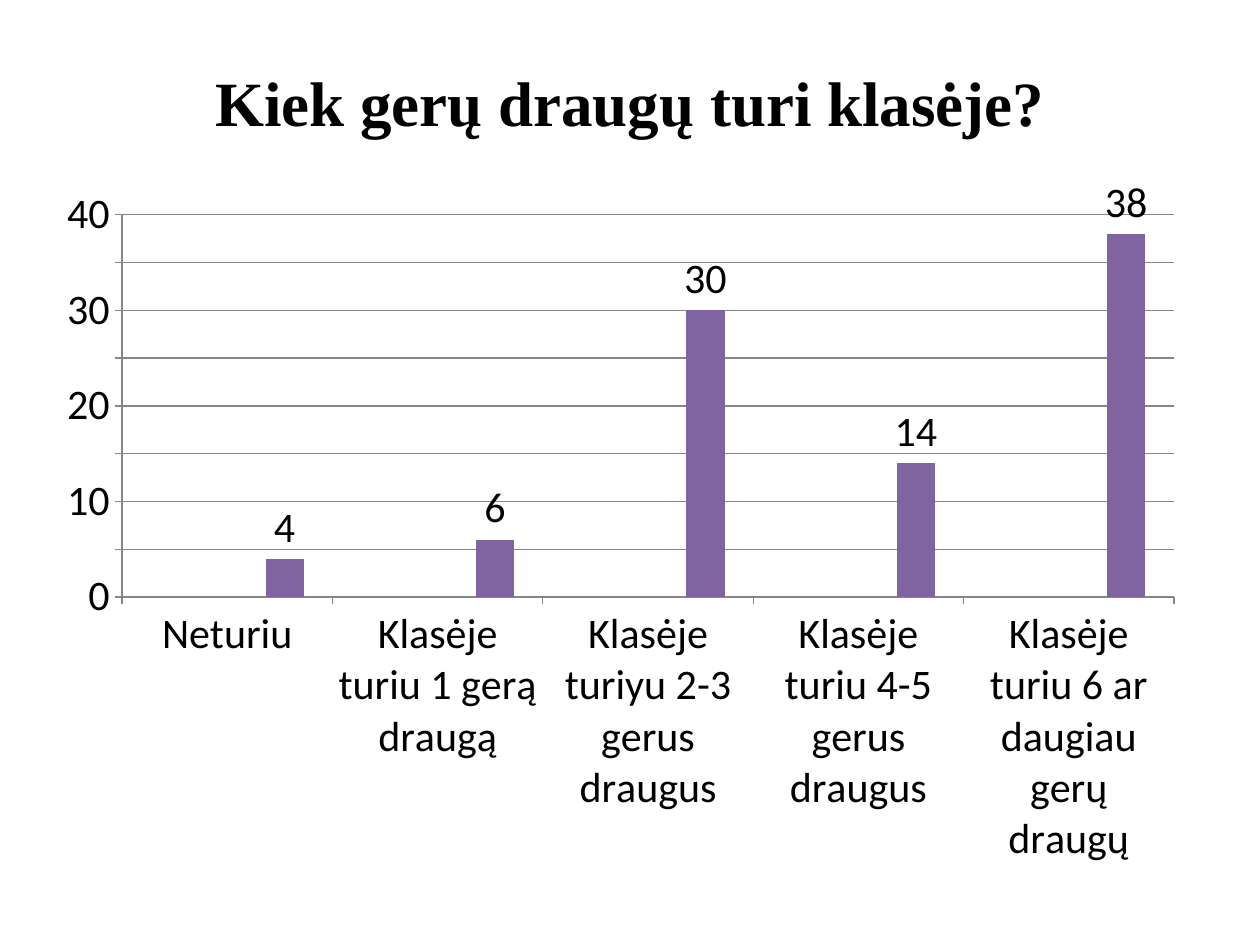
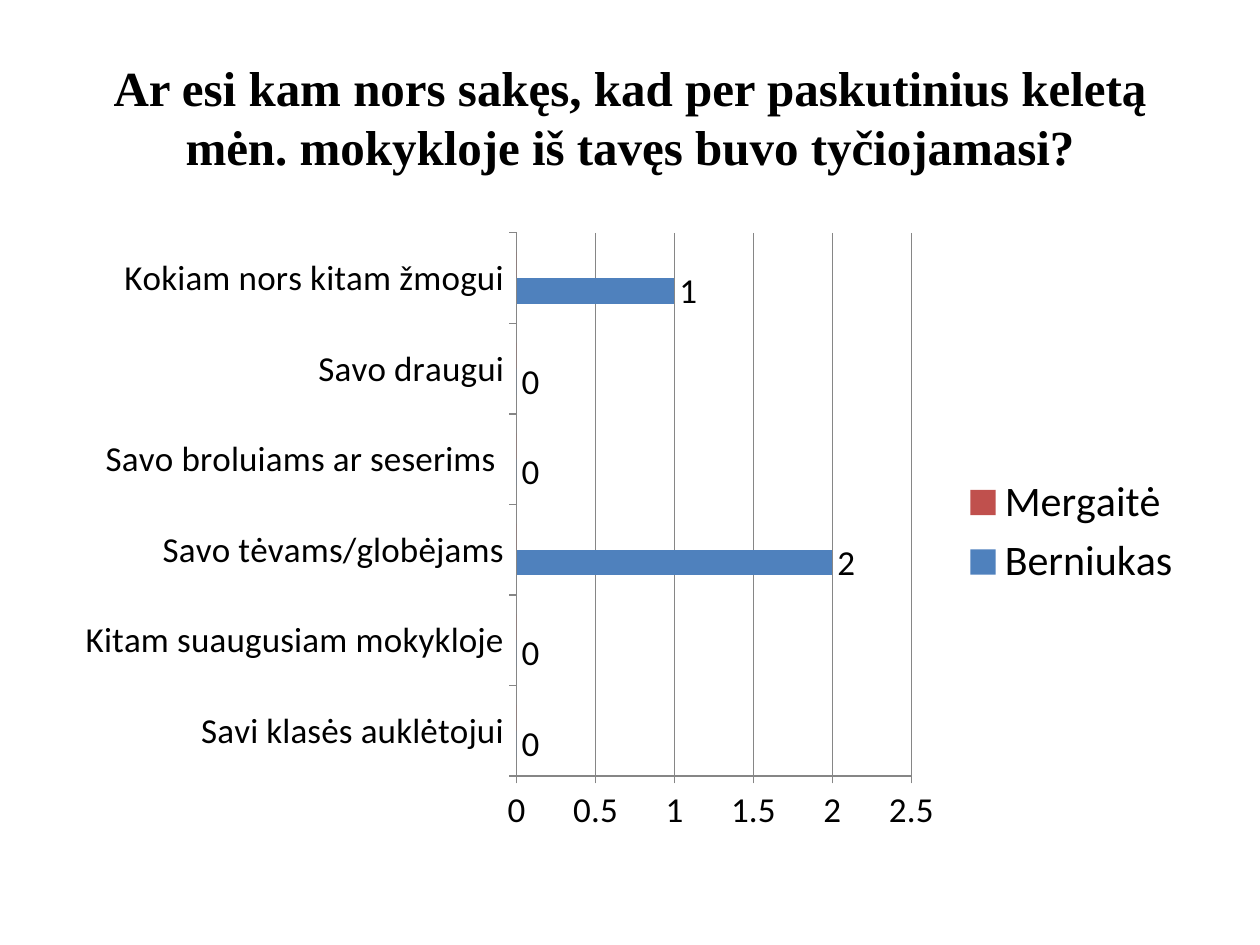
from dataclasses import dataclass

from pptx import Presentation
from pptx.chart.data import CategoryChartData
from pptx.dml.color import RGBColor
from pptx.enum.chart import XL_CHART_TYPE as ChartType
from pptx.enum.chart import XL_LABEL_POSITION as LabelPosition
from pptx.enum.chart import XL_LEGEND_POSITION as LegendPosition
from pptx.enum.chart import XL_TICK_MARK as TickMark
from pptx.enum.text import MSO_ANCHOR as Anchor
from pptx.enum.text import PP_ALIGN as Align
from pptx.util import Inches, Pt


@dataclass(frozen=True)
class Theme:
    text: RGBColor = RGBColor.from_string("000000")
    grid: RGBColor = RGBColor.from_string("868686")
    blue: RGBColor = RGBColor.from_string("4F81BD")
    red: RGBColor = RGBColor.from_string("C0504D")
    green: RGBColor = RGBColor.from_string("9BBB59")
    purple: RGBColor = RGBColor.from_string("8064A2")
    title_font: str = "Times New Roman"
    chart_font: str = "Calibri"
    large_title: int = 36
    small_title: int = 28
    large_label: int = 24
    small_label: int = 20
    line: float = 0.75


THEME = Theme()


def style_font(font, name, size, bold=False):
    font.name = name
    font.size = Pt(size)
    font.bold = bold
    font.color.rgb = THEME.text


def style_line(line):
    line.color.rgb = THEME.grid
    line.width = Pt(THEME.line)


def add_title(page, box, text, size):
    """Centred question above the chart; box is in inches."""
    frame = page.shapes.add_textbox(*map(Inches, box)).text_frame
    frame.word_wrap = True
    frame.vertical_anchor = Anchor.MIDDLE
    para = frame.paragraphs[0]
    para.text = text
    para.alignment = Align.CENTER
    style_font(para.font, THEME.title_font, size, bold=True)


def add_answer_chart(page, box, kind, categories, series, labelled, size, unit, top):
    """Clustered bars; series holds (name, values, colour) and one is labelled."""
    data = CategoryChartData()
    data.categories = categories
    for name, values, _ in series:
        data.add_series(name, values)
    chart = page.shapes.add_chart(kind, *map(Inches, box), data).chart
    chart.has_title = False
    chart.has_legend = False
    style_font(chart.font, THEME.chart_font, size)

    # Axes and gridlines
    for axis in (chart.category_axis, chart.value_axis):
        axis.major_tick_mark = TickMark.OUTSIDE
        axis.minor_tick_mark = TickMark.NONE
        style_line(axis.format.line)
    scale = chart.value_axis
    scale.minimum_scale, scale.maximum_scale, scale.major_unit = 0, top, unit
    scale.has_major_gridlines = True
    style_line(scale.major_gridlines.format.line)
    scale.tick_labels.number_format = "General"
    scale.tick_labels.number_format_is_linked = False

    # Bars and value labels
    plot = chart.plots[0]
    plot.gap_width = 150
    plot.overlap = 0
    plot.vary_by_categories = False
    for bars, (name, _, colour) in zip(plot.series, series):
        bars.invert_if_negative = False
        bars.format.fill.solid()
        bars.format.fill.fore_color.rgb = colour
        if name == labelled:
            labels = bars.data_labels
            labels.show_value = True
            labels.position = LabelPosition.OUTSIDE_END
            style_font(labels.font, THEME.chart_font, size)
    return chart


def add_legend(chart):
    chart.has_legend = True
    chart.legend.position = LegendPosition.RIGHT
    chart.legend.include_in_layout = False
    style_font(chart.legend.font, THEME.chart_font, THEME.large_label)


def build_friends_page(page):
    add_title(page, (0.5, 0.3, 9, 1.01), "Kiek gerų draugų turi klasėje?",
              THEME.large_title)
    categories = (
        "Neturiu",
        "Klasėje turiu 1 gerą draugą",
        "Klasėje turiyu 2-3 gerus draugus",
        "Klasėje turiu 4-5 gerus draugus",
        "Klasėje turiu 6 ar daugiau gerų draugų",
    )
    unanswered = [None] * len(categories)
    series = (
        ("Series 1", unanswered, THEME.blue),
        ("Series 2", unanswered, THEME.red),
        ("Series 3", unanswered, THEME.green),
        ("Series 4", (4, 6, 30, 14, 38), THEME.purple),
    )
    add_answer_chart(page, (0.35, 1.39, 9.15, 5.59), ChartType.COLUMN_CLUSTERED,
                     categories, series, "Series 4", THEME.large_label,
                     unit=5, top=40)


def build_telling_page(page):
    add_title(page, (0.5, 0.3, 9, 1.25),
              "Ar esi kam nors sakęs, kad per paskutinius keletą mėn. "
              "mokykloje iš tavęs buvo tyčiojamasi?", THEME.small_title)
    categories = (
        "Savi klasės auklėtojui",
        "Kitam suaugusiam mokykloje",
        "Savo tėvams/globėjams",
        "Savo broluiams ar seserims ",
        "Savo draugui",
        "Kokiam nors kitam žmogui",
    )
    series = (
        ("Berniukas", (0, 0, 2, 0, 0, 1), THEME.blue),
        ("Mergaitė", [0] * len(categories), THEME.red),
    )
    chart = add_answer_chart(page, (0.5, 1.75, 9, 4.95), ChartType.BAR_CLUSTERED,
                             categories, series, "Berniukas", THEME.small_label,
                             unit=0.5, top=2.5)
    add_legend(chart)


def main():
    deck = Presentation()
    deck.slide_width, deck.slide_height = Inches(10), Inches(7.5)
    blank = deck.slide_layouts[6]
    for build in (build_friends_page, build_telling_page):
        build(deck.slides.add_slide(blank))
    deck.save("out.pptx")


if __name__ == "__main__":
    main()
